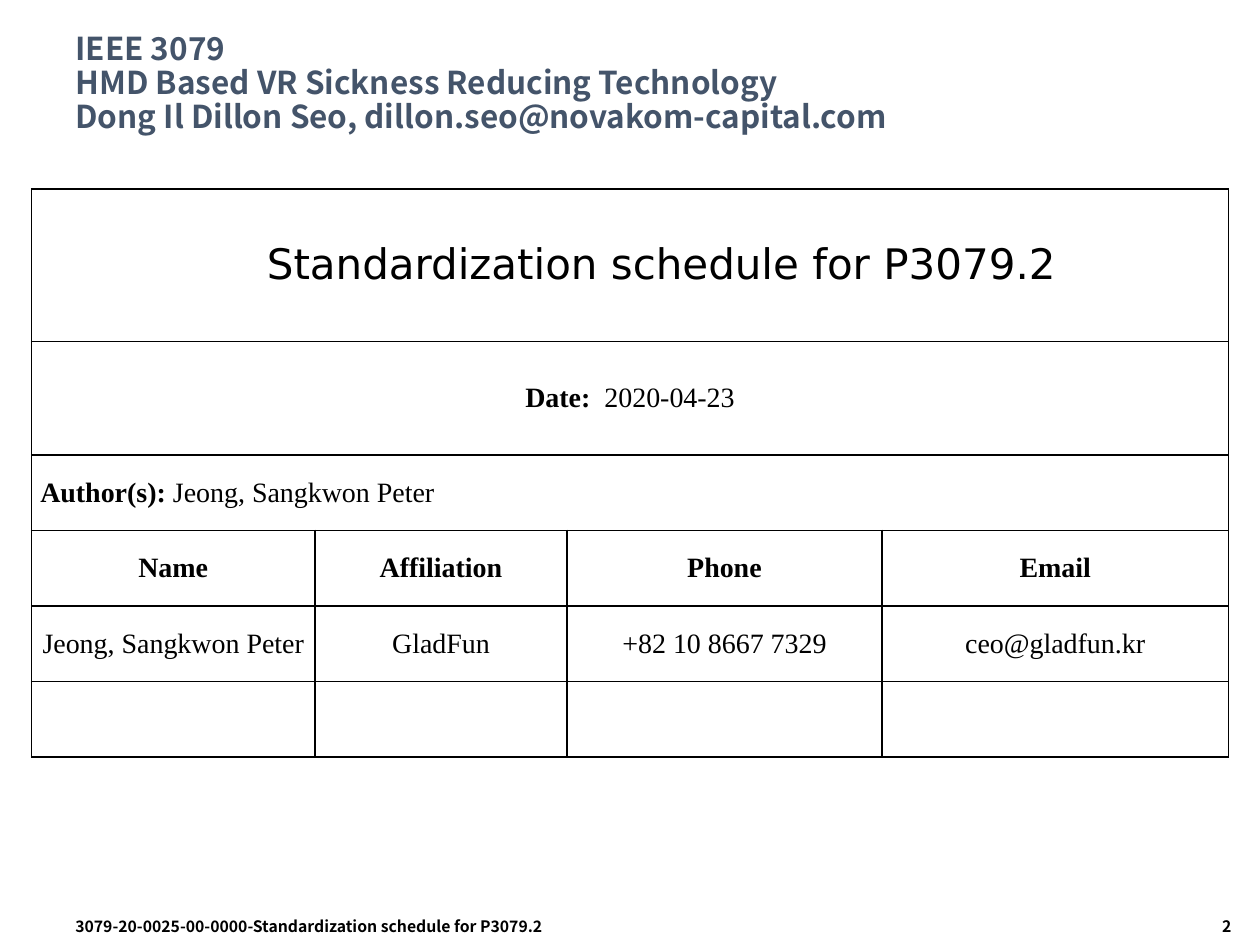
from dataclasses import dataclass

from lxml import etree
from pptx import Presentation
from pptx.dml.color import RGBColor
from pptx.enum.text import MSO_ANCHOR, PP_ALIGN
from pptx.oxml.ns import qn
from pptx.util import Inches, Pt

LEFT, MID, RIGHT = PP_ALIGN.LEFT, PP_ALIGN.CENTER, PP_ALIGN.RIGHT
TOP, CENTER = MSO_ANCHOR.TOP, MSO_ANCHOR.MIDDLE

COLORS = {"ink": "000000", "slate": "44546A"}
SANS, SERIF, WIDE = "Noto Sans CJK KR", "Times New Roman", "DejaVu Sans"
COLS = [2.25, 2, 2.5, 2.75]
ROWS = [1.21, 0.9] + [0.6] * 4


@dataclass
class Phrase:
    text: str
    bold: bool = False
    size: float = 16
    face: str = SERIF
    color: str = "ink"


@dataclass
class Label:
    left: float
    top: float
    width: float
    height: float
    phrase: Phrase
    align: PP_ALIGN = LEFT
    anchor: MSO_ANCHOR = TOP
    spacing: float = 1.0


@dataclass
class Entry:
    phrases: list[Phrase]
    align: PP_ALIGN = MID
    after: float = 0
    indent: float = 0


LABELS = [
    Label(0.5, 0.17, 9, 1,
          Phrase("IEEE 3079\vHMD Based VR Sickness Reducing Technology\v"
                 "Dong Il Dillon Seo, dillon.seo@novakom-capital.com",
                 True, 18, SANS, "slate"), anchor=CENTER, spacing=0.9),
    Label(8.25, 7.23, 1.62, 0.27, Phrase("2", True, 9, SANS), RIGHT),
    Label(0.5, 7.23, 7.33, 0.27,
          Phrase("3079-20-0025-00-0000-Standardization schedule for P3079.2",
                 True, 9, SANS)),
]

BANNERS = [
    Entry([Phrase("Standardization schedule for P3079.2", size=24, face=WIDE)],
          after=12, indent=0.5),
    Entry([Phrase("Date:", True), Phrase("  2020-04-23")], after=12),
    Entry([Phrase("Author(s): ", True), Phrase("Jeong, Sangkwon Peter")],
          LEFT),
]
HEADS = ["Name", "Affiliation", "Phone", "Email"]
AUTHOR = ["Jeong, Sangkwon Peter", "GladFun", "+82 10 8667 7329",
          "ceo@gladfun.kr"]


def style(run, phrase: Phrase) -> None:
    look = {"size": Pt(phrase.size), "name": phrase.face, "bold": phrase.bold}
    for key, value in look.items():
        setattr(run.font, key, value)
    run.font.color.rgb = RGBColor.from_string(COLORS[phrase.color])


def add_label(slide, label: Label) -> None:
    box = slide.shapes.add_textbox(
        *map(Inches, (label.left, label.top, label.width, label.height)))
    frame = box.text_frame
    frame.word_wrap = True
    frame.vertical_anchor = label.anchor
    para = frame.paragraphs[0]
    para.text = label.phrase.text
    para.alignment = label.align
    para.line_spacing = label.spacing
    for run in para.runs:
        style(run, label.phrase)


def frame_cell(cell) -> None:
    """Give a cell its insets, thin black borders and no fill."""
    look = {"margin_left": Inches(0.07), "margin_right": Inches(0.07),
            "margin_top": 0, "margin_bottom": 0, "vertical_anchor": CENTER}
    for key, value in look.items():
        setattr(cell, key, value)
    props = cell._tc.get_or_add_tcPr()
    for side in ("lnL", "lnR", "lnT", "lnB"):
        line = etree.SubElement(props, qn(f"a:{side}"), w=str(Pt(1)))
        fill = etree.SubElement(line, qn("a:solidFill"))
        etree.SubElement(fill, qn("a:srgbClr"), val=COLORS["ink"])
    cell.fill.background()


def fill_cell(cell, entry: Entry) -> None:
    para = cell.text_frame.paragraphs[0]
    para.alignment = entry.align
    para.space_after = Pt(entry.after)
    if entry.indent:
        props = para._p.get_or_add_pPr()
        props.set("marL", str(Inches(entry.indent)))
        props.set("indent", "0")
    for phrase in entry.phrases:
        run = para.add_run()
        run.text = phrase.text
        style(run, phrase)


def add_grid(slide) -> None:
    table = slide.shapes.add_table(
        len(ROWS), len(COLS), Inches(0.25), Inches(1.5),
        Inches(sum(COLS)), Inches(sum(ROWS))).table
    for flag in ("first_row", "horz_banding"):
        setattr(table, flag, False)
    for col, width in zip(table.columns, COLS):
        col.width = Inches(width)
    for row, height in zip(table.rows, ROWS):
        row.height = Inches(height)
    for cell in table.iter_cells():
        frame_cell(cell)

    for row, entry in enumerate(BANNERS):
        first = table.cell(row, 0)
        first.merge(table.cell(row, len(COLS) - 1))
        fill_cell(first, entry)
    for row, (words, bold) in enumerate([(HEADS, True), (AUTHOR, False)],
                                        len(BANNERS)):
        for col, word in enumerate(words):
            fill_cell(table.cell(row, col), Entry([Phrase(word, bold)]))


def main() -> None:
    deck = Presentation()
    deck.slide_width, deck.slide_height = Inches(10), Inches(7.5)
    slide = deck.slides.add_slide(deck.slide_layouts[6])
    add_grid(slide)
    for label in LABELS:
        add_label(slide, label)
    deck.save("out.pptx")


if __name__ == "__main__":
    main()
